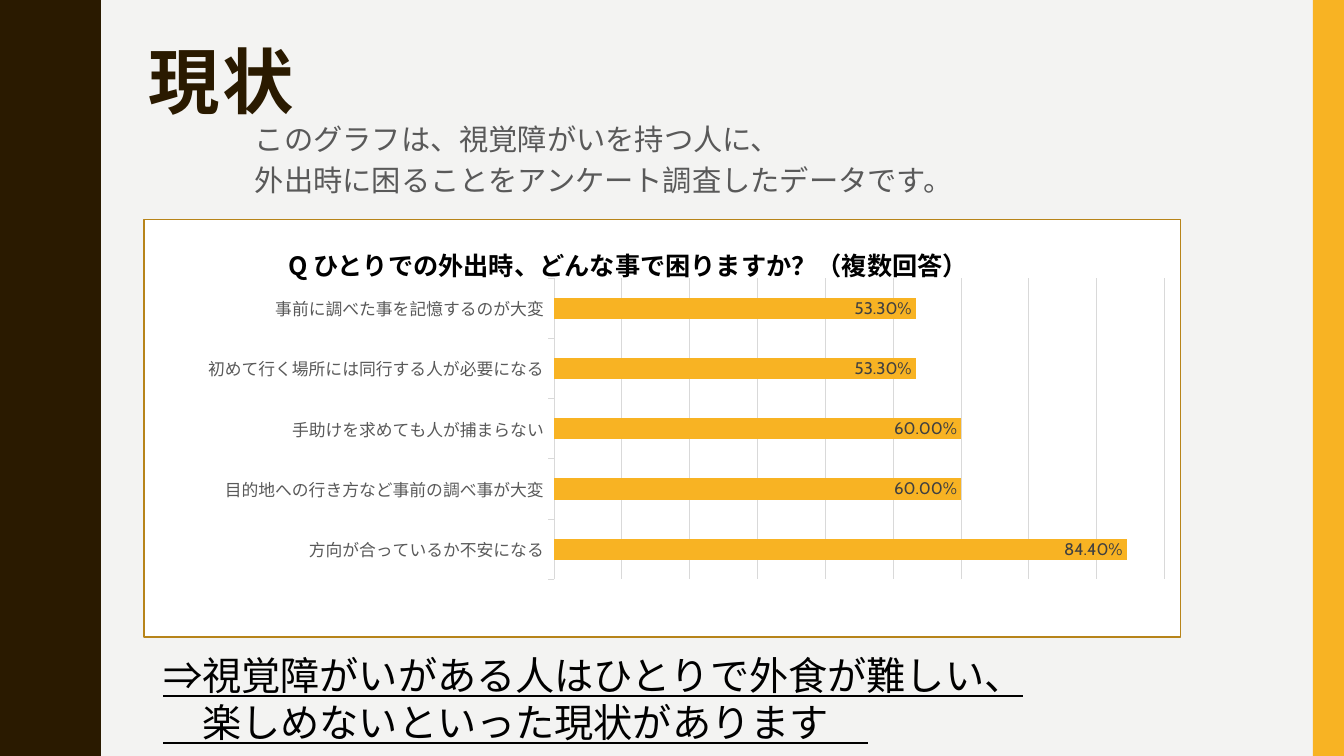
from lxml import etree
from pptx import Presentation
from pptx.chart.data import CategoryChartData
from pptx.dml.color import RGBColor
from pptx.enum.chart import XL_CHART_TYPE, XL_LABEL_POSITION, XL_TICK_LABEL_POSITION, XL_TICK_MARK
from pptx.enum.shapes import MSO_SHAPE
from pptx.oxml import parse_xml
from pptx.oxml.ns import nsdecls, qn
from pptx.util import Inches, Pt

BAR_CLUSTERED = XL_CHART_TYPE.BAR_CLUSTERED
INSIDE_END = XL_LABEL_POSITION.INSIDE_END
LABELS_LOW = XL_TICK_LABEL_POSITION.LOW
TICK_OUTSIDE = XL_TICK_MARK.OUTSIDE
RECTANGLE = MSO_SHAPE.RECTANGLE

COLORS = {
    "background": "F3F3F2", "brown": "2A1A00", "yellow": "F8B323",
    "gold": "B7841A", "white": "FFFFFF", "black": "000000",
    "grey": "595959", "label": "404040", "grid": "D9D9D9",
}
JAPANESE = "Noto Sans CJK JP"
WAVE_PERIOD = 1.5
HALF_WAVE = [
    (0.78, 0), (0.78, 0.07), (0.79, 0.14), (0.8, 0.2), (0.81, 0.25),
    (0.83, 0.29), (0.85, 0.33), (0.87, 0.38), (0.89, 0.42), (0.91, 0.46),
    (0.93, 0.5), (0.95, 0.55), (0.96, 0.61), (0.97, 0.68), (0.97, 0.75),
]
ANSWERS = {
    "方向が合っているか不安になる": 0.844,
    "目的地への行き方など事前の調べ事が大変": 0.6,
    "手助けを求めても人が捕まらない": 0.6,
    "初めて行く場所には同行する人が必要になる": 0.533,
    "事前に調べた事を記憶するのが大変": 0.533,
}
PLOT_LAYOUT = {"x": 0.324, "y": 0.192, "w": 0.537, "h": 0.682}


def color(name):
    """Return the named palette colour."""
    return RGBColor.from_string(COLORS[name])


def paint(shape, fill, line=None):
    """Give a shape a flat fill and an optional thin outline."""
    shape.shadow.inherit = False
    shape.fill.solid()
    shape.fill.fore_color.rgb = color(fill)
    if line:
        shape.line.color.rgb = color(line)
        shape.line.width = Pt(1)
    else:
        shape.line.fill.background()


def add_rectangle(page, left, top, width, height, fill, line=None):
    """Add a flat rectangle."""
    box = page.shapes.add_shape(
        RECTANGLE, Inches(left), Inches(top), Inches(width), Inches(height))
    paint(box, fill, line)


def add_wave_band(page, height):
    """Add the left band with a wavy right edge."""
    wave = HALF_WAVE + [(x, WAVE_PERIOD - y) for x, y in HALF_WAVE[-2::-1]]
    edge = [(x, y + WAVE_PERIOD * turn)
            for turn in range(int(height / WAVE_PERIOD)) for x, y in wave]
    builder = page.shapes.build_freeform(0, 0, scale=Inches(1))
    builder.add_line_segments(edge + [(0, height)], close=True)
    paint(builder.convert_to_shape(), "brown")


def add_text(page, place, text, size, fill, font=JAPANESE, bold=False,
             underline=False, line_spacing=1.0, space_before=0, tracking=0):
    """Add a text box with one paragraph for each line of text."""
    box = page.shapes.add_textbox(*map(Inches, place))
    frame = box.text_frame
    frame.word_wrap = True
    frame.text = text
    for para in frame.paragraphs:
        para.line_spacing = line_spacing
        para.space_before = Pt(space_before)
        for span in para.runs:
            span.font.size = Pt(size)
            span.font.name = font
            span.font.bold = bold
            span.font.underline = underline
            span.font.color.rgb = color(fill)
            properties = span.font._element
            if tracking:
                properties.set("spc", str(tracking * 100))
            east_asian = etree.Element(qn("a:ea"), typeface=JAPANESE)
            properties.find(qn("a:latin")).addnext(east_asian)


def style_font(font, size, fill):
    """Set the font of a chart part."""
    font.name = "Cabin"
    font.size = Pt(size)
    font.color.rgb = color(fill)


def style_line(line):
    """Set the thin grey line of an axis or grid."""
    line.color.rgb = color("grid")
    line.width = Pt(0.75)


def place_plot(chart):
    """Fix the inner plot area and clear the chart background."""
    plot_area = chart._chartSpace.chart.plotArea
    for layout in plot_area.findall(qn("c:layout")):
        plot_area.remove(layout)
    modes = '<c:xMode val="edge"/><c:yMode val="edge"/>'
    sizes = "".join(f'<c:{key} val="{value}"/>' for key, value in PLOT_LAYOUT.items())
    plot_area.insert(0, parse_xml(
        f'<c:layout {nsdecls("c")}><c:manualLayout><c:layoutTarget val="inner"/>'
        f'{modes}{sizes}</c:manualLayout></c:layout>'))
    chart._chartSpace.chart.addnext(parse_xml(
        f'<c:spPr {nsdecls("c", "a")}><a:noFill/><a:ln><a:noFill/></a:ln></c:spPr>'))


def add_answer_chart(page, left, top, width, height):
    """Add the bar chart of survey answers."""
    data = CategoryChartData(number_format="0.00%")
    data.categories = list(ANSWERS)
    data.add_series("Series 1", list(ANSWERS.values()))
    chart = page.shapes.add_chart(
        BAR_CLUSTERED, Inches(left), Inches(top), Inches(width), Inches(height), data).chart
    chart.has_title = False
    chart.has_legend = False
    style_font(chart.font, 10, "black")
    place_plot(chart)

    categories = chart.category_axis
    categories.major_tick_mark = TICK_OUTSIDE
    categories.tick_label_position = LABELS_LOW
    style_font(categories.tick_labels.font, 12, "grey")
    style_line(categories.format.line)

    values = chart.value_axis
    values.visible = False
    values.minimum_scale = 0
    values.maximum_scale = 0.9
    values.major_unit = 0.1
    values.has_major_gridlines = True
    style_line(values.major_gridlines.format.line)

    plot = chart.plots[0]
    plot.gap_width = 182
    plot.vary_by_categories = False
    bars = plot.series[0]
    bars.format.fill.solid()
    bars.format.fill.fore_color.rgb = color("yellow")
    labels = bars.data_labels
    labels.show_value = True
    labels.position = INSIDE_END
    labels.number_format = "0.00%"
    labels.number_format_is_linked = False
    style_font(labels.font, 12, "label")


def main():
    """Build the slide and save it."""
    deck = Presentation()
    deck.slide_width = Inches(13.33)
    deck.slide_height = Inches(7.5)
    page = deck.slides.add_slide(deck.slide_layouts[6])
    page.background.fill.solid()
    page.background.fill.fore_color.rgb = color("background")

    add_wave_band(page, 7.5)
    add_rectangle(page, 13.02, 0, 0.31, 7.5, "yellow")
    add_text(page, (1.37, 0.42, 11.13, 1.63), "現状", 51, "brown",
             font="Arial Narrow", bold=True, line_spacing=0.9, tracking=2)
    add_text(page, (2.43, 1.19, 10.48, 1.63),
             "このグラフは、視覚障がいを持つ人に、\n"
             "外出時に困ることをアンケート調査したデータです。",
             20.9, "grey", line_spacing=0.9, space_before=7)
    add_rectangle(page, 1.43, 2.18, 10.28, 4.14, "white", "gold")
    add_text(page, (2.76, 2.43, 7.62, 0.66),
             "Q ひとりでの外出時、どんな事で困りますか？（複数回答）",
             18, "black", bold=True)
    add_answer_chart(page, 1.84, 1.92, 11.28, 4.38)
    add_text(page, (1.52, 6.41, 11.9, 1.35),
             "⇒視覚障がいがある人はひとりで外食が難しい、\n"
             "\u3000楽しめないといった現状があります\u3000",
             28, "black", font="Cabin", underline=True)
    deck.save("out.pptx")


if __name__ == "__main__":
    main()
